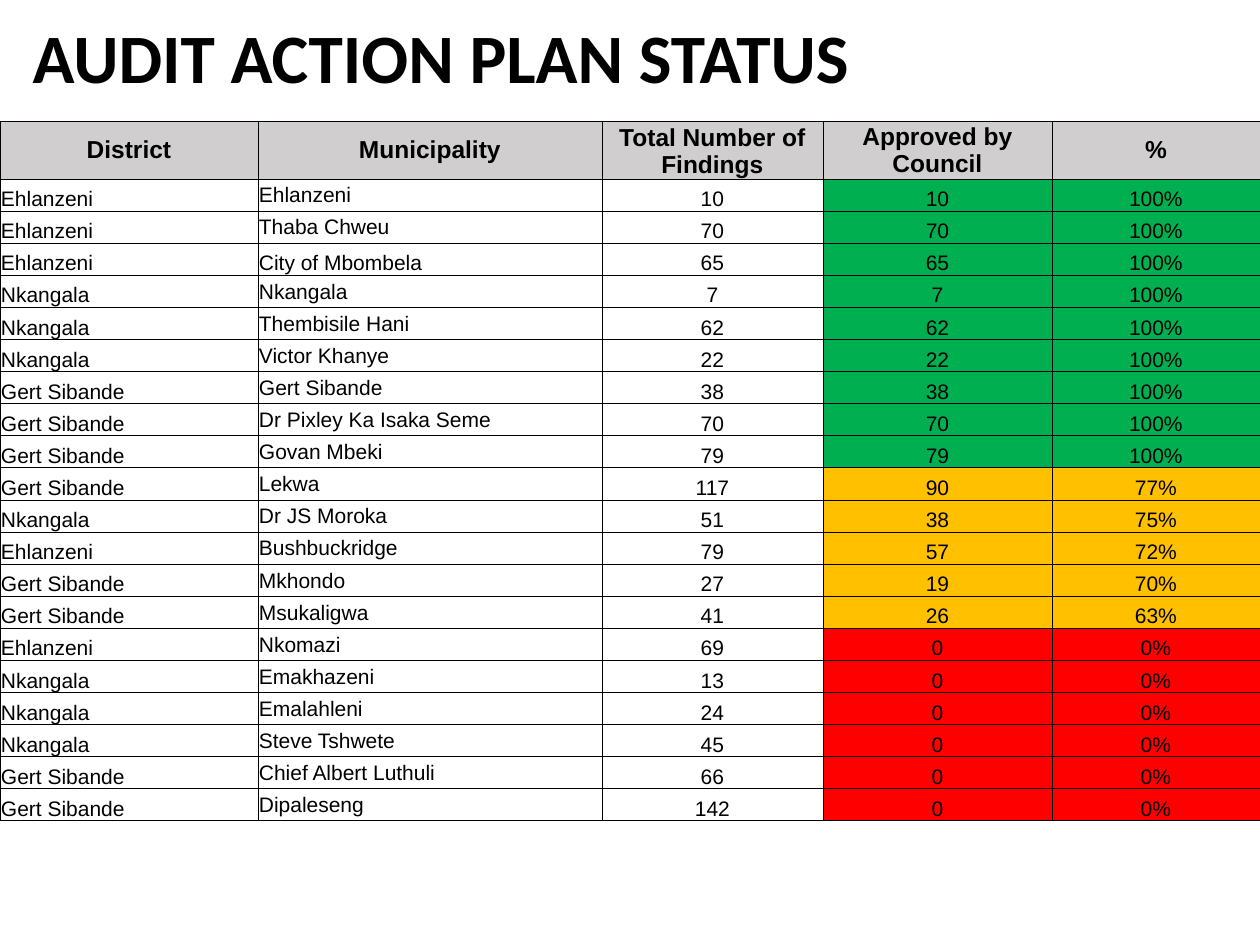
from lxml import etree
from pptx import Presentation, util as u
from pptx.dml.color import RGBColor
from pptx.enum import text as t
from pptx.oxml.ns import qn

PX = u.Inches(1) / 126  # one scale: 126 px to the inch
THEME = {
    "ink": "000000", "head": "D0CECE",
    "good": "00B050", "part": "FFC000", "none": "FF0000",
    "title": 39.6, "label": 14, "body": 12, "rule": 0.5,
    "display": "Calibri", "sans": "Arial",
}
MID, LOW = t.MSO_ANCHOR.MIDDLE, t.MSO_ANCHOR.BOTTOM
LEFT, MIDDLE = t.PP_ALIGN.LEFT, t.PP_ALIGN.CENTER


def px(n):
    return u.Emu(round(n * PX))


def write(frame, words, size, font=THEME["sans"], bold=False, align=LEFT, space=1.0):
    frame.word_wrap = True
    par = frame.paragraphs[0]
    par.alignment = align
    par.line_spacing = space
    run = par.add_run()
    run.text = words
    run.font.size = u.Pt(size)
    run.font.name = font
    run.font.bold = bold
    run.font.color.rgb = RGBColor.from_string(THEME["ink"])


deck = Presentation()
deck.slide_width, deck.slide_height = px(1260), px(945)
slide = deck.slides.add_slide(deck.slide_layouts[5])

# Title
title = slide.shapes.title
title.left, title.top, title.width, title.height = px(20), px(25), px(1177), px(72)
title.text_frame.auto_size = t.MSO_AUTO_SIZE.NONE
title.text_frame.vertical_anchor = MID
write(title.text_frame, "AUDIT ACTION PLAN STATUS", THEME["title"],
      font=THEME["display"], bold=True, space=0.9)

# Findings: district, municipality, total, approved
heads = ["District", "Municipality", "Total Number of Findings", "Approved by Council", "%"]
data = [
    ("Ehlanzeni", "Ehlanzeni", 10, 10),
    ("Ehlanzeni", "Thaba Chweu", 70, 70),
    ("Ehlanzeni", "City of Mbombela", 65, 65),
    ("Nkangala", "Nkangala", 7, 7),
    ("Nkangala", "Thembisile Hani", 62, 62),
    ("Nkangala", "Victor Khanye", 22, 22),
    ("Gert Sibande", "Gert Sibande", 38, 38),
    ("Gert Sibande", "Dr Pixley Ka Isaka Seme", 70, 70),
    ("Gert Sibande", "Govan Mbeki", 79, 79),
    ("Gert Sibande", "Lekwa", 117, 90),
    ("Nkangala", "Dr JS Moroka", 51, 38),
    ("Ehlanzeni", "Bushbuckridge", 79, 57),
    ("Gert Sibande", "Mkhondo", 27, 19),
    ("Gert Sibande", "Msukaligwa", 41, 26),
    ("Ehlanzeni", "Nkomazi", 69, 0),
    ("Nkangala", "Emakhazeni", 13, 0),
    ("Nkangala", "Emalahleni", 24, 0),
    ("Nkangala", "Steve Tshwete", 45, 0),
    ("Gert Sibande", "Chief Albert Luthuli", 66, 0),
    ("Gert Sibande", "Dipaleseng", 142, 0),
]
rows = [heads] + [(*row, f"{row[3] / row[2]:.0%}") for row in data]

# Table grid
top, body = 58, 642
grid = slide.shapes.add_table(len(rows), len(heads), 0, px(121), px(1260), px(top + body)).table
grid.horz_banding = False
for col, wide in zip(grid.columns, (258, 344, 221, 229, 208)):
    col.width = px(wide)
for r, line in enumerate(grid.rows):
    line.height = px(body / len(data)) if r else px(top)

# Cells: borders, fill and text
for r, row in enumerate(rows):
    if r:
        tone = "good" if row[3] == row[2] else "part" if row[3] else "none"
    for c, value in enumerate(row):
        cell = grid.cell(r, c)
        cell.margin_left = cell.margin_right = cell.margin_top = px(1)
        cell.margin_bottom = 0
        props = cell._tc.get_or_add_tcPr()
        for side in ("a:lnL", "a:lnR", "a:lnT", "a:lnB"):
            edge = etree.SubElement(props, qn(side), w=str(u.Pt(THEME["rule"])))
            paint = etree.SubElement(edge, qn("a:solidFill"))
            etree.SubElement(paint, qn("a:srgbClr"), val=THEME["ink"])
        if r and c < 3:
            cell.fill.background()
        else:
            cell.fill.solid()
            cell.fill.fore_color.rgb = RGBColor.from_string(THEME[tone if r else "head"])
        if r:
            cell.vertical_anchor = MID if c == 1 and value != "City of Mbombela" else LOW
        else:
            cell.vertical_anchor = LOW if c == 2 else MID
        write(cell.text_frame, str(value), THEME["body" if r else "label"],
              bold=r == 0, align=LEFT if r and c < 2 else MIDDLE)

deck.save("out.pptx")
